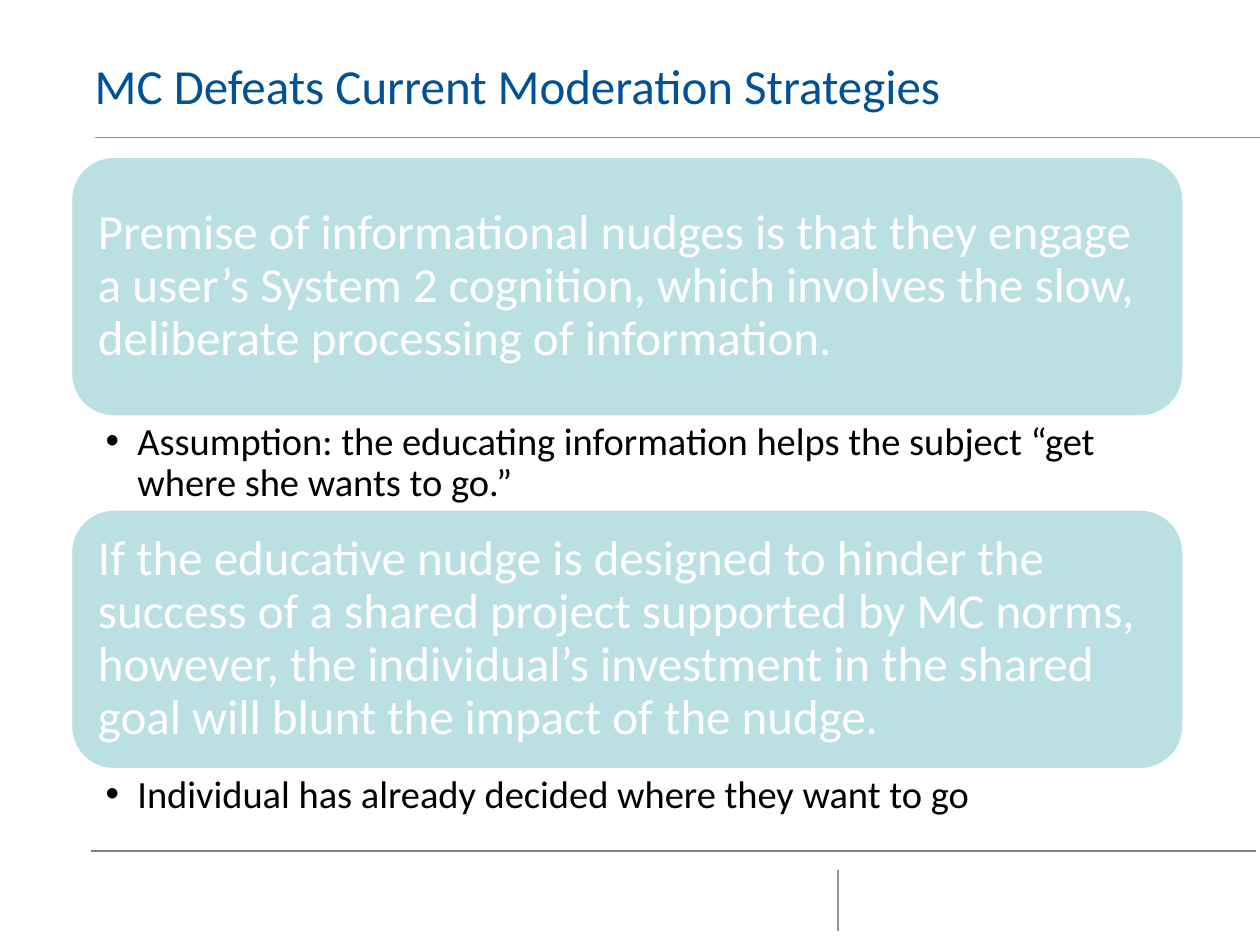
from lxml import etree
from pptx import Presentation
from pptx.dml.color import RGBColor
from pptx.enum.shapes import MSO_CONNECTOR, MSO_SHAPE
from pptx.enum.text import MSO_ANCHOR, MSO_AUTO_SIZE, PP_ALIGN
from pptx.oxml.ns import qn
from pptx.util import Cm, Pt

STRAIGHT = MSO_CONNECTOR.STRAIGHT
ROUNDED = MSO_SHAPE.ROUNDED_RECTANGLE
TOP, MIDDLE = MSO_ANCHOR.TOP, MSO_ANCHOR.MIDDLE
LEFT_ALIGN = PP_ALIGN.LEFT
NO_AUTOFIT = MSO_AUTO_SIZE.NONE

FONT = "Calibri"
COLORS = {
    "title": "005295",
    "card": "BBE0E3",
    "white": "FFFFFF",
    "black": "000000",
    "rule": "919194",
    "footer_rule": "808080",
}
STACK_LEFT, STACK_TOP, STACK_WIDTH = 1.42, 3.15, 22.45
CARD_HEIGHT = 5.26
TITLE = "MC Defeats Current Moderation Strategies"
POINTS = [
    (
        "Premise of informational nudges is that they engage a user’s System 2 "
        "cognition, which involves the slow, deliberate processing of information.",
        "Assumption: the educating information helps the subject “get where she "
        "wants to go.”",
        1.85,
    ),
    (
        "If the educative nudge is designed to hinder the success of a shared "
        "project supported by MC norms, however, the individual’s investment in "
        "the shared goal will blunt the impact of the nudge.",
        "Individual has already decided where they want to go",
        1.3,
    ),
]
RULES = [
    (1.83, 17.15, 25.32, 17.15, "footer_rule"),
    (1.91, 2.77, 25.4, 2.77, "rule"),
    (16.89, 18.77, 16.89, 17.53, "rule"),
]


def rgb(name):
    return RGBColor.from_string(COLORS[name])


def place(shape, left, top, width, height):
    shape.left, shape.top = Cm(left), Cm(top)
    shape.width, shape.height = Cm(width), Cm(height)


def write(shape, text, size, color, insets, anchor, spacing):
    frame = shape.text_frame
    frame.text = text
    frame.word_wrap = True
    frame.auto_size = NO_AUTOFIT
    frame.vertical_anchor = anchor
    (frame.margin_left, frame.margin_top,
     frame.margin_right, frame.margin_bottom) = map(Cm, insets)
    paragraph = frame.paragraphs[0]
    paragraph.alignment = LEFT_ALIGN
    paragraph.line_spacing = spacing
    paragraph.space_before = Pt(0)
    font = paragraph.runs[0].font
    font.name, font.size = FONT, Pt(size)
    font.color.rgb = rgb(color)


def add_rule(slide, x1, y1, x2, y2, color):
    rule = slide.shapes.add_connector(STRAIGHT, Cm(x1), Cm(y1), Cm(x2), Cm(y2))
    rule.line.color.rgb = rgb(color)
    rule.line.width = Pt(1)
    etree.SubElement(rule._element.spPr, qn("a:effectLst"))


def add_card(slide, text, top):
    card = slide.shapes.add_shape(
        ROUNDED, Cm(STACK_LEFT), Cm(top), Cm(STACK_WIDTH), Cm(CARD_HEIGHT))
    card.shadow.inherit = False
    card.fill.solid()
    card.fill.fore_color.rgb = rgb("card")
    card.line.color.rgb = rgb("white")
    card.line.width = Pt(2)
    write(card, text, 28, "white", (0.3, 0.3, 0.3, 0.3), MIDDLE, 0.9)


def fill_bullet(placeholder, text, top, height):
    place(placeholder, STACK_LEFT, top, STACK_WIDTH, height)
    write(placeholder, text, 22, "black", (0.71, 0.1, 0.56, 0.1), TOP, 0.9)
    properties = placeholder.text_frame.paragraphs[0]._p.get_or_add_pPr()
    properties.set("marL", str(Cm(0.64)))
    properties.set("indent", str(-Cm(0.64)))
    etree.SubElement(properties, qn("a:buChar")).set("char", "•")


def main():
    deck = Presentation()
    deck.slide_width, deck.slide_height = Cm(25.4), Cm(19.05)
    slide = deck.slides.add_slide(deck.slide_layouts.get_by_name("Two Content"))
    for rule in RULES:
        add_rule(slide, *rule)
    title, *details = slide.placeholders
    place(title, 1.91, 1.17, 21.92, 2.64)
    write(title, TITLE, 28, "title", (0, 0, 0, 0), TOP, Pt(32))

    top = STACK_TOP
    for detail, (premise, remark, remark_height) in zip(details, POINTS):
        add_card(slide, premise, top)
        top += CARD_HEIGHT
        fill_bullet(detail, remark, top, remark_height)
        top += remark_height
    deck.save("out.pptx")


if __name__ == "__main__":
    main()
